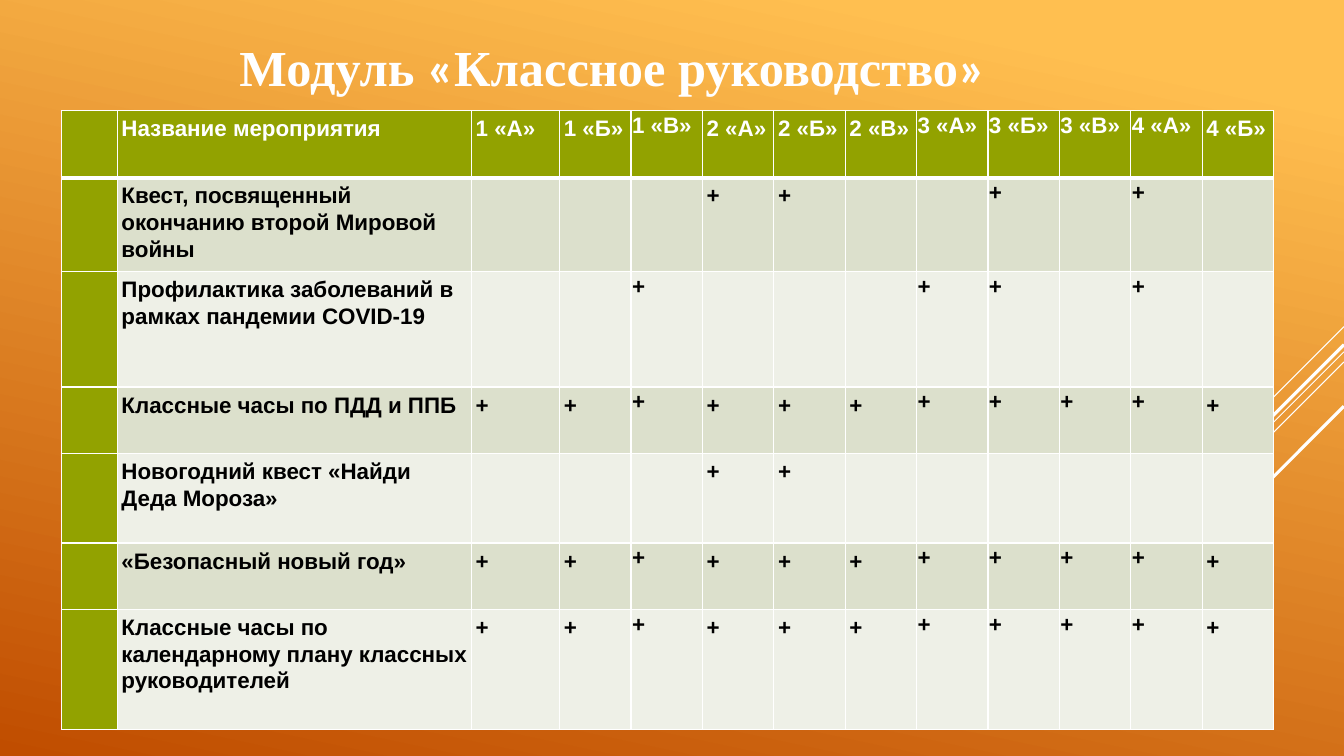
from lxml.etree import SubElement
from pptx import Presentation
from pptx.dml.color import RGBColor
from pptx.enum.shapes import MSO_CONNECTOR
from pptx.enum.text import MSO_ANCHOR, PP_ALIGN
from pptx.oxml.ns import qn
from pptx.util import Pt

COLORS = {
    "white": "FFFFFF",
    "black": "000000",
    "amber": "FFBF50",
    "rust": "C04D00",
    "olive": "92A200",
    "dark_band": "DCE0CC",
    "light_band": "EEF0E7",
}
CLASSES = ["1 «А»", "1 «Б»", "1 «В»", "2 «А»", "2 «Б»", "2 «В»",
           "3 «А»", "3 «Б»", "3 «В»", "4 «А»", "4 «Б»"]
TIGHT_CLASSES = {"1 «В»", "3 «А»", "3 «Б»", "3 «В»", "4 «А»"}
EVENTS = [
    ("Квест, посвященный окончанию второй Мировой войны",
     {"2 «А»", "2 «Б»", "3 «Б»", "4 «А»"}),
    ("Профилактика заболеваний в рамках пандемии COVID-19",
     {"1 «В»", "3 «А»", "3 «Б»", "4 «А»"}),
    ("Классные часы по ПДД и ППБ", set(CLASSES)),
    ("Новогодний квест «Найди Деда Мороза»", {"2 «А»", "2 «Б»"}),
    ("«Безопасный новый год»", set(CLASSES)),
    ("Классные часы по календарному плану классных руководителей", set(CLASSES)),
]
COLUMN_WIDTHS = [40, 253, 63] + [51] * 10
ROW_HEIGHTS = [48, 67, 82.5, 47.5, 64, 47.5, 85.5]
DIAGONALS = [
    (233.3, 72, 0.75),
    (251.3, 234.7, 0.75),
    (258.5, 149.5, 0.75),
    (246.2, 137.5, 2.25),
    (290.2, 100, 2.25),
]
TITLE_RUNS = [
    ("Модуль ", "Times New Roman"),
    ("«", "Calibri"),
    ("Классное руководство", "Times New Roman"),
    ("»", "Calibri"),
]


def rgb(name):
    return RGBColor.from_string(COLORS[name])


def apply_format(target, values):
    for name, value in values.items():
        setattr(target, name, value)


def add_run(paragraph, text, font_name, size, color):
    run = paragraph.add_run()
    run.text = text
    apply_format(run.font, {"name": font_name, "size": Pt(size), "bold": True})
    run.font.color.rgb = rgb(color)


def paint_background(slide):
    fill = slide.background.fill
    fill.gradient()
    fill.gradient_angle = 258
    for stop, position, color in zip(fill.gradient_stops, (0.1, 1), ("amber", "rust")):
        stop.position = position
        stop.color.rgb = rgb(color)


def add_diagonal(slide, right, top, length, width):
    line = slide.shapes.add_connector(
        MSO_CONNECTOR.STRAIGHT, right, Pt(top), right - Pt(length), Pt(top + length))
    line.line.color.rgb = rgb("white")
    line.line.width = Pt(width)
    SubElement(line._element.spPr, qn("a:effectLst"))


def fill_title(slide):
    title = slide.shapes.title
    apply_format(title, {"left": Pt(101.5), "top": Pt(-12),
                         "width": Pt(672), "height": Pt(119)})
    title.text_frame.vertical_anchor = MSO_ANCHOR.MIDDLE
    paragraph = title.text_frame.paragraphs[0]
    paragraph.alignment = PP_ALIGN.CENTER
    for text, font_name in TITLE_RUNS:
        add_run(paragraph, text, font_name, 36, "white")


def set_borders(cell, widths):
    properties = cell._tc.get_or_add_tcPr()
    for side, width in widths.items():
        border = SubElement(properties, qn(f"a:ln{side}"), w=str(Pt(width)))
        solid = SubElement(border, qn("a:solidFill"))
        SubElement(solid, qn("a:srgbClr"), val=COLORS["white"])


def format_cell(cell, text, margin, fill_color, text_color, border_widths):
    set_borders(cell, border_widths)
    cell.fill.solid()
    cell.fill.fore_color.rgb = rgb(fill_color)
    sides = ("left", "right", "top", "bottom")
    apply_format(cell, {f"margin_{side}": Pt(margin) for side in sides})
    if text:
        paragraph = cell.text_frame.paragraphs[0]
        paragraph.line_spacing = 1.07
        add_run(paragraph, text, "Arial", 16, text_color)


def add_events_table(slide):
    rows = [["", "Название мероприятия", *CLASSES]]
    for event, participants in EVENTS:
        marks = ["+" if name in participants else "" for name in CLASSES]
        rows.append(["", event, *marks])
    frame = slide.shapes.add_table(
        len(rows), len(COLUMN_WIDTHS), Pt(43.8), Pt(79),
        Pt(sum(COLUMN_WIDTHS)), Pt(sum(ROW_HEIGHTS)))
    table = frame.table
    for column, width in zip(table.columns, COLUMN_WIDTHS):
        column.width = Pt(width)
    for row, height in zip(table.rows, ROW_HEIGHTS):
        row.height = Pt(height)
    for row_index, texts in enumerate(rows):
        is_header = row_index == 0
        band = "dark_band" if row_index % 2 else "light_band"
        borders = {"L": 1, "R": 1, "T": 3 if row_index == 1 else 1,
                   "B": 3 if is_header else 1}
        for column_index, text in enumerate(texts):
            is_tight = rows[0][column_index] in TIGHT_CLASSES
            format_cell(
                table.cell(row_index, column_index), text,
                0.7 if is_tight else 3,
                "olive" if is_header or column_index == 0 else band,
                "white" if is_header else "black", borders)


def main():
    presentation = Presentation()
    apply_format(presentation, {"slide_width": Pt(960), "slide_height": Pt(540)})
    slide = presentation.slides.add_slide(presentation.slide_layouts[5])
    paint_background(slide)
    for top, length, width in DIAGONALS:
        add_diagonal(slide, presentation.slide_width, top, length, width)
    fill_title(slide)
    add_events_table(slide)
    presentation.save("out.pptx")


if __name__ == "__main__":
    main()
